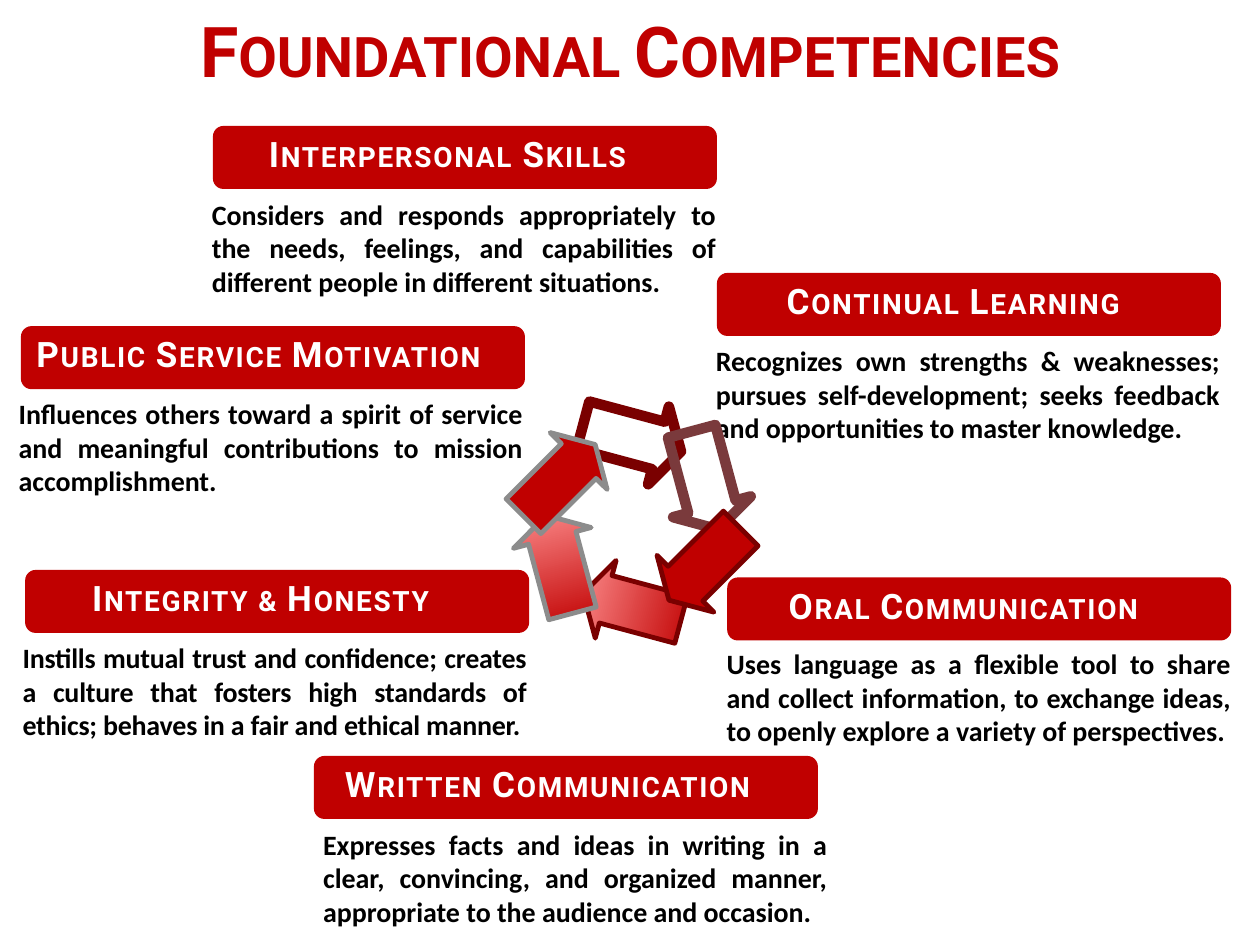
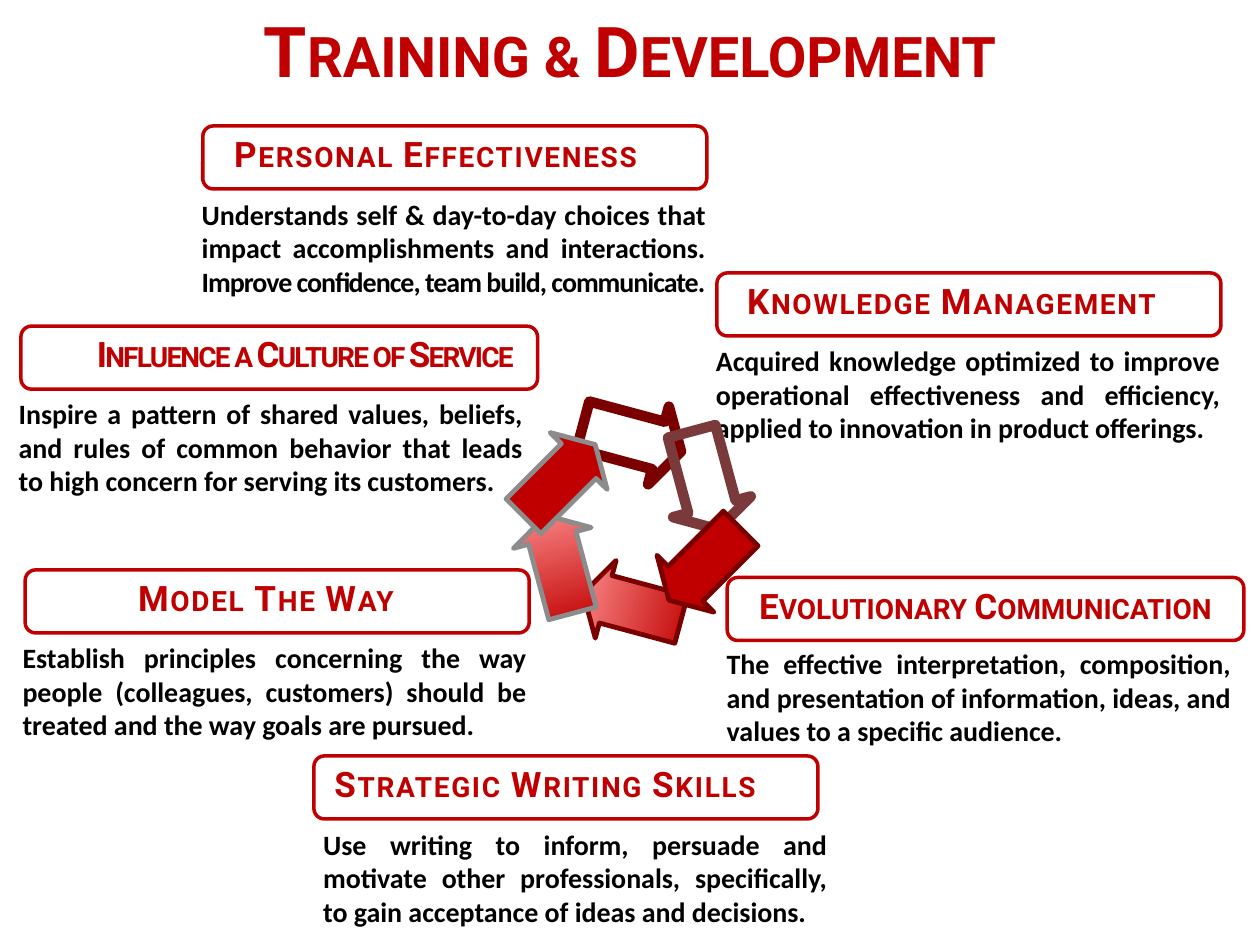
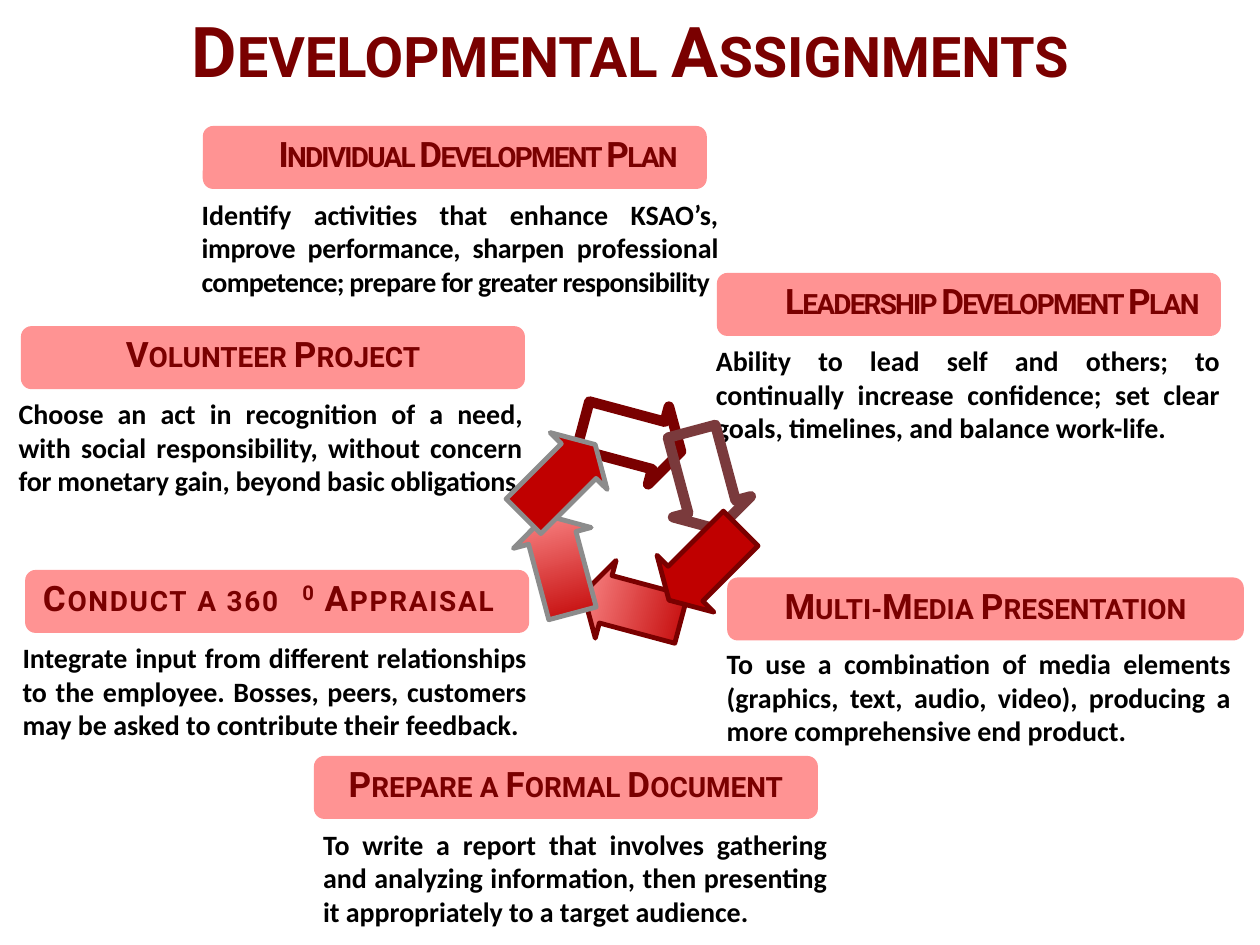
from dataclasses import dataclass
from math import cos, radians, sin
from pptx import Presentation
from pptx.dml.color import RGBColor as RGB
from pptx.enum.shapes import MSO_SHAPE as SHAPE
from pptx.enum.text import MSO_ANCHOR as ANCHOR, MSO_AUTO_SIZE as FIT, PP_ALIGN as ALIGN
from pptx.util import Pt


@dataclass(frozen=True)
class Theme:
    red: str = "C00000"
    dark: str = "7A0000"
    dusk: str = "7A3A3C"
    pink: str = "FF9393"
    white: str = "FFFFFF"
    black: str = "000000"
    gray: str = "8C8C8C"
    head: str = "Roboto"
    body: str = "Calibri"
    title: int = 40
    label: int = 20
    text: int = 16


T = Theme()

# Label left and top, then the shift of its text from the label's corner
SPOTS = [
    (121.7, 72, -7.7, 37.3),
    (409.7, 156, -7.7, 36.9),
    (12, 186.4, -8.4, 36.8),
    (14.4, 325.7, -8.6, 36.8),
    (415.6, 330, -7.4, 36),
    (179.4, 432, -1.8, 37.3),
]
WIDE, TALL, SPAN, HIGH = 288, 36, 302.4, 64.8
LONG, BROAD = 295.2, 309.6

# Each card: label runs, text runs, label width, text width.
# A run is (text, letter spacing) with an optional "super".
DECK = [
    ("Foundational Competencies", T.red, T.red, T.white, None, 0, [
        ([("Interpersonal Skills", 1)],
         [("Considers and responds appropriately to the needs, feelings, and capabilities "
           "of different people in different situations.", 0)], WIDE, SPAN),
        ([("Continual Learning", 1)],
         [("Recognizes own strengths & weaknesses; pursues self-development; seeks feedback "
           "and opportunities to master knowledge.", 0)], WIDE, SPAN),
        ([("Public Service Motivation", 1)],
         [("Influences others toward a spirit of service and meaningful contributions to "
           "mission accomplishment.", 0)], WIDE, SPAN),
        ([("Integrity & Honesty", 1)],
         [("Instills mutual trust and confidence; creates a culture that fosters high "
           "standards of ethics; behaves in a fair and ethical manner.", -0.1)], WIDE, SPAN),
        ([("Oral Communication", 1)],
         [("Uses language as a flexible tool to share and collect information, to exchange "
           "ideas, to openly explore a variety of perspectives.", 0)], WIDE, SPAN),
        ([("Written Communication", 1)],
         [("Expresses facts and ideas in writing in a clear, convincing, and organized "
           "manner, appropriate to the audience and occasion.", 0)], WIDE, SPAN),
    ]),
    ("Training & Development", T.red, T.white, T.red, T.red, -5.8, [
        ([("Personal Effectiveness", 1)],
         [("Understands self & day-to-day choices that impact accomplishments and "
           "interactions. ", 0),
          ("Improve confidence, team build, communicate.", -0.56)], WIDE, SPAN),
        ([("Knowledge Management", 1)],
         [("Acquired knowledge optimized to improve operational effectiveness and "
           "efficiency, applied to innovation in product offerings.", 0)], WIDE, SPAN),
        ([("Influence a Culture of Service", -1)],
         [("Inspire a pattern of shared values, beliefs, and rules of common behavior that "
           "leads to high concern for serving its customers.", 0)], LONG, SPAN),
        ([("Model The Way", 1)],
         [("Establish principles concerning the way people (colleagues, customers) should "
           "be treated and the way goals are pursued.", 0)], WIDE, SPAN),
        ([("Evolutionary Communication", 0)],
         [("The effective interpretation, composition, and presentation of information, "
           "ideas, and values to a specific audience.", 0)], LONG, SPAN),
        ([("Strategic Writing Skills", 1)],
         [("Use writing to inform, persuade and motivate other professionals, specifically, "
           "to gain acceptance of ideas and decisions.", 0)], WIDE, SPAN),
    ]),
    ("Developmental Assignments", T.dark, T.pink, T.dark, None, -5.8, [
        ([("Individual Development Plan", -1)],
         [("Identify activities that enhance KSAO’s, ", 0),
          ("improve performance, sharpen ", -0.2), ("professional ", 0),
          ("competence; prepare for greater responsibility", -0.4)], WIDE, BROAD),
        ([("Leadership Development Plan", -1)],
         [("Ability to lead self and others; to continually increase confidence; set clear "
           "goals, timelines, and balance work-life.", 0)], WIDE, SPAN),
        ([("Volunteer Project", 0)],
         [("Choose an act in recognition of a need, with social responsibility, without "
           "concern ", 0),
          ("for monetary gain, beyond basic obligations", -0.1)], WIDE, SPAN),
        ([("Conduct a 360", 1), ("0", 1, "super"), (" Appraisal", 1)],
         [("Integrate input from different relationships to the employee. Bosses, peers, "
           "customers may be asked to contribute their feedback.", 0)], WIDE, SPAN),
        ([("Multi-Media Presentation", 0)],
         [("To use a combination of media elements (graphics, text, audio, video), "
           "producing a more comprehensive end product.", 0)], LONG, SPAN),
        ([("Prepare a Formal Document", 0)],
         [("To write a report that involves gathering and analyzing information, then "
           "presenting it appropriately to a target audience.", 0)], WIDE, SPAN),
    ]),
]

# Ring of arrows, back to front: place clockwise from the top, fill, far colour, line
RING = [
    (0, None, None, T.dark),
    (180, T.red, T.pink, T.dark),
    (60, None, None, T.dusk),
    (240, T.red, T.pink, T.gray),
    (120, T.red, None, T.dark),
    (300, T.red, None, T.gray),
]
MID_X, MID_Y, REACH = 361.2, 298.5, 48
THICK, RUN, TURN = 46, 58, -75


def write(frame, runs, face, size, color, align, caps=False):
    frame.word_wrap = True
    frame.auto_size = FIT.NONE
    par = frame.paragraphs[0]
    par.alignment = align
    for text, gap, *mark in runs:
        run = par.add_run()
        run.text = text
        props = run._r.get_or_add_rPr()
        if gap:
            props.set("spc", str(round(gap * 100)))
        if mark:
            props.set("baseline", "30000")
        elif caps:
            props.set("cap", "small")
    font = par.font
    font.name, font.size, font.bold = face, Pt(size), True
    font.color.rgb = RGB.from_string(color)
    return par


def paint(shape, fill, line, weight):
    shape.shadow.inherit = False
    if fill:
        shape.fill.solid()
        shape.fill.fore_color.rgb = RGB.from_string(fill)
    else:
        shape.fill.background()
    if line:
        shape.line.color.rgb = RGB.from_string(line)
        shape.line.width = Pt(weight)
    else:
        shape.line.fill.background()


prs = Presentation()
prs.slide_width, prs.slide_height = Pt(720), Pt(540)

for name, ink, fill, tone, edge, shift, cards in DECK:
    slide = prs.slides.add_slide(prs.slide_layouts[5])
    shapes = slide.shapes
    title = shapes.title
    title.left, title.top, title.width, title.height = Pt(0), Pt(0), Pt(720), Pt(HIGH)
    title.text_frame.vertical_anchor = ANCHOR.MIDDLE
    par = write(title.text_frame, [(name, 0)], T.head, T.title, ink, ALIGN.CENTER, True)
    par.line_spacing = 0.83

    for spot, (left, top, dent, drop) in enumerate(SPOTS):
        label, text, wide, span = cards[spot]
        if spot == 0:
            left += shift
        bar = shapes.add_shape(SHAPE.ROUNDED_RECTANGLE, Pt(left), Pt(top), Pt(wide), Pt(TALL))
        paint(bar, fill, edge, 2)
        bar.text_frame.vertical_anchor = ANCHOR.MIDDLE
        par = write(bar.text_frame, label, T.head, T.label, tone, ALIGN.CENTER, True)
        par.line_spacing = 0.8
        box = shapes.add_textbox(Pt(left + dent), Pt(top + drop), Pt(span), Pt(HIGH))
        write(box.text_frame, text, T.body, T.text, T.black, ALIGN.JUSTIFY)

    for place, color, far, line in RING:
        x = MID_X + REACH * sin(radians(place))
        y = MID_Y - REACH * cos(radians(place))
        arrow = shapes.add_shape(SHAPE.DOWN_ARROW, Pt(x - THICK / 2), Pt(y - RUN / 2),
                                 Pt(THICK), Pt(RUN))
        arrow.adjustments[0], arrow.adjustments[1] = 0.61, 0.29
        arrow.rotation = (place + TURN) % 360
        paint(arrow, color, line, 2.75 if color else 6)
        if far:
            arrow.fill.gradient()
            arrow.fill.gradient_angle = 270
            for stop, hue in zip(arrow.fill.gradient_stops, (color, far)):
                stop.color.rgb = RGB.from_string(hue)

prs.save("out.pptx")
